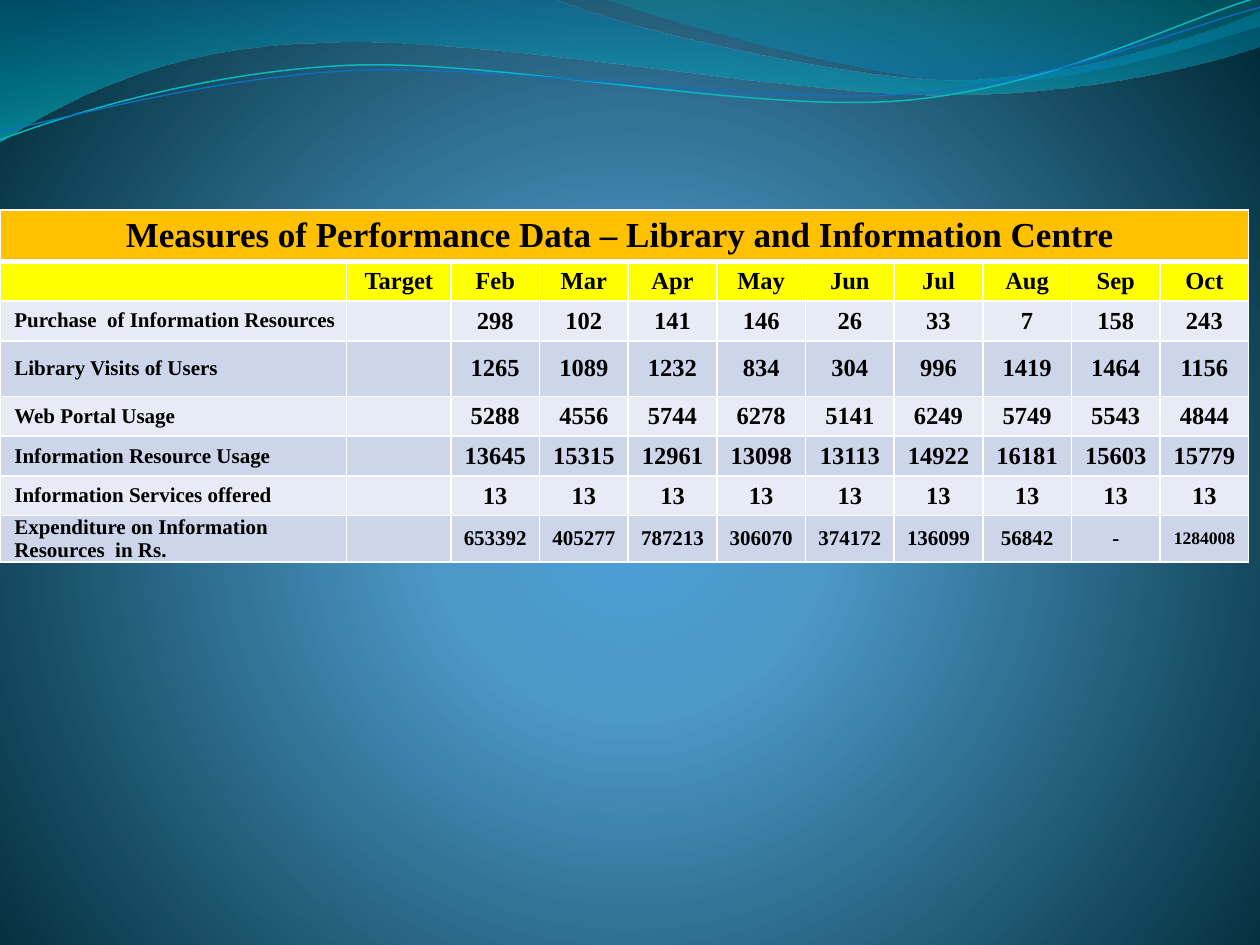
from dataclasses import dataclass

from pptx import Presentation
from pptx.dml.color import RGBColor as Rgb
from pptx.enum.text import MSO_ANCHOR as Anchor, PP_ALIGN as Align
from pptx.oxml import parse_xml
from pptx.oxml.ns import nsdecls, qn
from pptx.util import Cm, Pt

FONT = "Times New Roman"
COLORS = {
    "glow": "4AA0D6", "mid": "4C98C7", "edge": "002C38",
    "wave_blue": "0074A1", "wave_teal": "00C6CF",
    "crest_green": "00A1A9", "crest_blue": "008BBF",
    "teal_line": "0AB8BF", "blue_line": "0F6FC6",
    "title": "FFC000", "header": "FFFF00", "light": "E7EBF5", "dark": "CCD5EA",
    "text": "000000", "border": "FFFFFF",
}
RIBBON_TILT = 357.3
Point = tuple[float, float]


@dataclass
class Stop:
    position: int
    color: str
    alpha: int = 100


@dataclass
class Curve:
    """Points in cm; a segment of one point is straight, of three a Bezier."""
    start: Point
    segments: list[tuple[Point, ...]]


@dataclass
class Wave:
    curve: Curve
    stops: list[Stop]


@dataclass
class Ribbon:
    curve: Curve
    color: str
    width: float


@dataclass
class Measure:
    label: str
    values: list[str]
    height: float = 0.8
    size: int = 14


WAVES = [
    Wave(Curve((0, -0.03), [
        ((11.18, -0.03),),
        ((12.09, 0.43), (16.87, 1.6), (19.25, 1.6)),
        ((21.67, 1.6), (24.33, 0.66), (25.4, 0.23)),
        ((25.43, 0.91),),
        ((24.97, 1.12), (22.1, 1.93), (18.95, 1.91)),
        ((15.8, 1.91), (9.7, 0.71), (6.53, 0.86)),
        ((3.28, 0.89), (1.17, 2.11), (-0.03, 2.87)),
    ]), [Stop(0, "wave_blue", 45), Stop(100, "wave_teal", 55)]),
    Wave(Curve((12.17, -0.03), [
        ((12.93, 0.28), (17.32, 1.57), (19.53, 1.65)),
        ((21.74, 1.75), (24.41, 0.81), (25.4, 0.53)),
        ((25.4, 0),),
    ]), [Stop(0, "crest_green", 30), Stop(80, "crest_blue", 45)]),
]
RIBBONS = [
    Ribbon(Curve((-0.05, 2.22), [
        ((1.19, 1.82), (4.02, 1.04), (7.06, 1.05)),
        ((10.05, 1.07), (15.02, 2.37), (18.07, 2.29)),
        ((21.13, 2.2), (23.87, 0.91), (25.41, 0.55)),
    ]), "teal_line", 0.85),
    Ribbon(Curve((-0.04, 2.04), [
        ((1.16, 1.9), (4.18, 1.15), (7.2, 1.16)),
        ((10.25, 1.18), (15.13, 2.23), (18.18, 2.16)),
        ((21.21, 2.1), (23.93, 1.06), (25.45, 0.75)),
    ]), "blue_line", 0.75),
]

TITLE = "Measures of Performance Data – Library and Information Centre "
HEADERS = ["", "Target", *"Feb Mar Apr May Jun Jul Aug Sep Oct".split()]
MEASURES = [
    Measure("Purchase  of Information Resources",
            "298 102 141 146 26 33 7 158 243".split()),
    Measure("Library Visits of Users",
            "1265 1089 1232 834 304 996 1419 1464 1156".split(), height=1.12),
    Measure("Web Portal Usage",
            "5288 4556 5744 6278 5141 6249 5749 5543 4844".split()),
    Measure("Information Resource Usage",
            "13645 15315 12961 13098 13113 14922 16181 15603 15779".split()),
    Measure("Information Services offered", ["13"] * 9),
    Measure("Expenditure on Information Resources  in Rs.",
            "653392 405277 787213 306070 374172 136099 56842 - 1284008".split(),
            height=0.92, size=12),
]
TABLE_WIDTH, LABEL_WIDTH, TARGET_WIDTH = 25.18, 6.99, 2.1
MONTH_WIDTH = (TABLE_WIDTH - LABEL_WIDTH - TARGET_WIDTH) / 9
COLUMN_WIDTHS = [LABEL_WIDTH, TARGET_WIDTH] + [MONTH_WIDTH] * 9
ROW_HEIGHTS = [1.0, 0.8] + [measure.height for measure in MEASURES]


def apply_gradient(element, stops: list[Stop], shade: str) -> None:
    """Replace the first solid fill in the element with a gradient."""
    marks = "".join(
        f'<a:gs pos="{stop.position * 1000}"><a:srgbClr val="{COLORS[stop.color]}">'
        f'<a:alpha val="{stop.alpha * 1000}"/></a:srgbClr></a:gs>' for stop in stops)
    solid = next(element.iter(qn("a:solidFill")))
    solid.getparent().replace(solid, parse_xml(
        f'<a:gradFill {nsdecls("a")} rotWithShape="1"><a:gsLst>{marks}</a:gsLst>'
        f'{shade}</a:gradFill>'))


def draw_curve(page, curve: Curve, close: bool):
    """Build the outline through all points, then bend the Bezier segments."""
    points = [(Cm(x), Cm(y)) for segment in curve.segments for x, y in segment]
    builder = page.shapes.build_freeform(*(Cm(value) for value in curve.start))
    builder.add_line_segments(points, close=close)
    shape = builder.convert_to_shape()
    shape.shadow.inherit = False
    lines = iter(list(shape.element.iter(qn("a:lnTo"))))
    for segment in curve.segments:
        pieces = [next(lines) for _ in segment]
        if len(pieces) == 3:
            bend = parse_xml(f'<a:cubicBezTo {nsdecls("a")}/>')
            pieces[0].addprevious(bend)
            for piece in pieces:
                bend.append(piece[0])
                piece.getparent().remove(piece)
    return shape


def draw_wave(page, wave: Wave) -> None:
    shape = draw_curve(page, wave.curve, close=True)
    shape.line.fill.background()
    shape.fill.solid()
    apply_gradient(shape.element, wave.stops, '<a:lin ang="5400000" scaled="0"/>')


def draw_ribbon(page, ribbon: Ribbon) -> None:
    shape = draw_curve(page, ribbon.curve, close=False)
    shape.rotation = RIBBON_TILT
    shape.fill.background()
    shape.line.color.rgb = Rgb.from_string(COLORS[ribbon.color])
    shape.line.width = Pt(ribbon.width)


def style_cell(cell, text: str, fill: str, size: int, label: bool = False,
               top: int = 1, bottom: int = 1) -> None:
    for side, width in {"L": 1, "R": 1, "T": top, "B": bottom}.items():
        cell._tc.get_or_add_tcPr().append(parse_xml(
            f'<a:ln{side} {nsdecls("a")} w="{Pt(width)}"><a:solidFill>'
            f'<a:srgbClr val="{COLORS["border"]}"/></a:solidFill></a:ln{side}>'))
    cell.fill.solid()
    cell.fill.fore_color.rgb = Rgb.from_string(COLORS[fill])
    cell.vertical_anchor = Anchor.MIDDLE
    para = cell.text_frame.paragraphs[0]
    para.text = text
    para.alignment = Align.LEFT if label else Align.CENTER
    para.font.name, para.font.size, para.font.bold = FONT, Pt(size), True
    para.font.color.rgb = Rgb.from_string(COLORS["text"])
    if label:
        cell.margin_left = cell.margin_right = Cm(0.18)
        cell.margin_top = cell.margin_bottom = 0
        para._p.get_or_add_pPr().set("marL", str(Cm(0.11)))


def draw_table(page) -> None:
    table = page.shapes.add_table(
        len(ROW_HEIGHTS), len(COLUMN_WIDTHS), Cm(0), Cm(4.23),
        Cm(TABLE_WIDTH), Cm(sum(ROW_HEIGHTS))).table
    table.first_row = table.horz_banding = False
    for column, width in zip(table.columns, COLUMN_WIDTHS):
        column.width = Cm(width)
    for row, height in zip(table.rows, ROW_HEIGHTS):
        row.height = Cm(height)

    # Title and month headings
    table.cell(0, 0).merge(table.cell(0, len(HEADERS) - 1))
    style_cell(table.cell(0, 0), TITLE, "title", 20, bottom=3)
    for index, header in enumerate(HEADERS):
        style_cell(table.cell(1, index), header, "header", 14, top=3)

    # One row for each measure; the target column stays empty
    for number, measure in enumerate(MEASURES):
        fill = "dark" if number % 2 else "light"
        for index, text in enumerate([measure.label, "", *measure.values]):
            size = 12 if index < 2 else 10 if len(text) > 6 else measure.size
            style_cell(table.cell(number + 2, index), text, fill, size, label=index == 0)


def main() -> None:
    deck = Presentation()
    deck.slide_width, deck.slide_height = Cm(25.4), Cm(19.05)
    page = deck.slides.add_slide(deck.slide_layouts[6])

    # Background glow
    page.background.fill.solid()
    apply_gradient(
        page.element, [Stop(0, "glow"), Stop(25, "mid"), Stop(100, "edge")],
        '<a:path path="circle"><a:fillToRect l="10000" t="110000" r="10000" b="100000"/></a:path>')

    # Waves along the top
    for wave in WAVES:
        draw_wave(page, wave)
    for ribbon in RIBBONS:
        draw_ribbon(page, ribbon)

    draw_table(page)
    deck.save("out.pptx")


if __name__ == "__main__":
    main()
